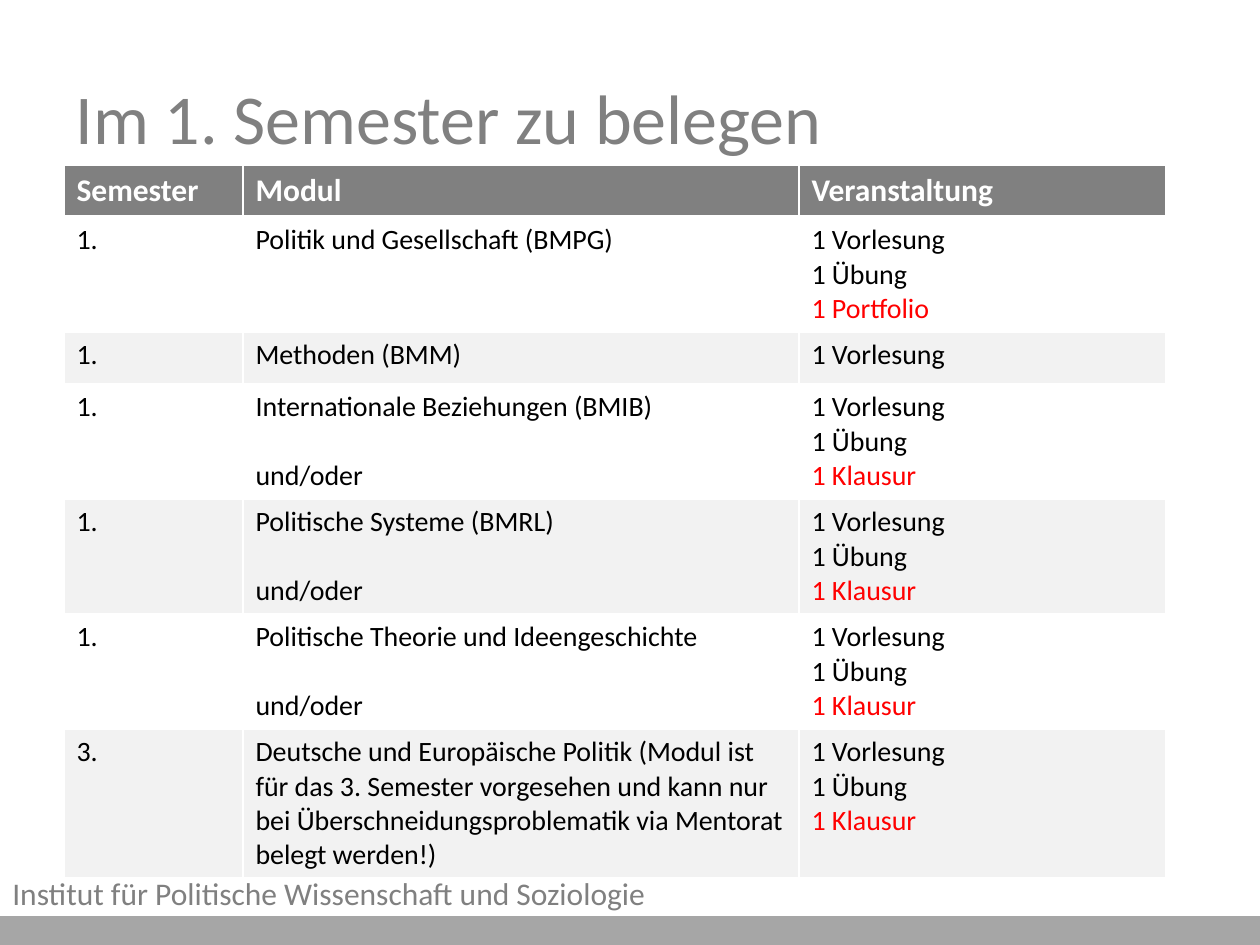
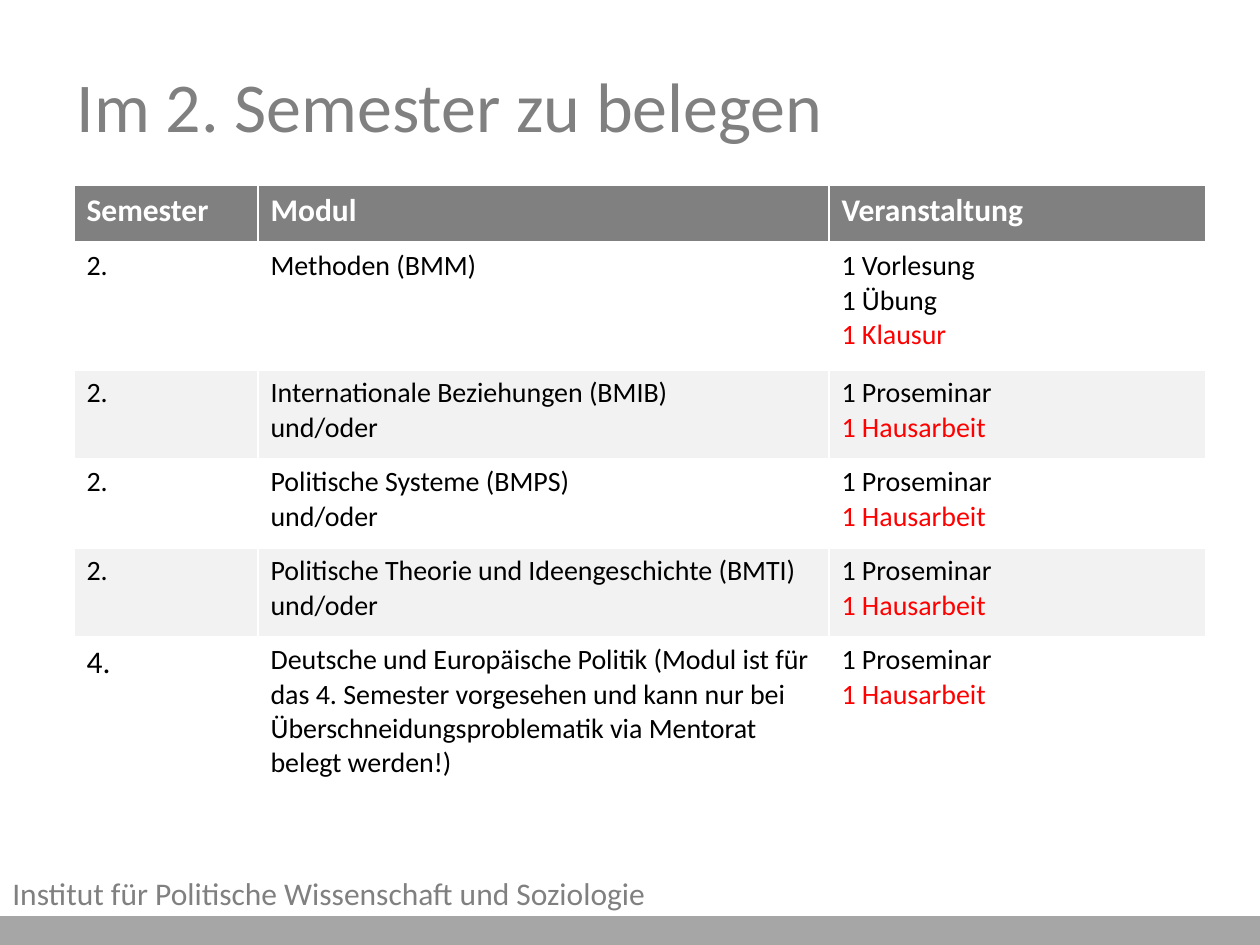
from lxml.etree import SubElement
from pptx import Presentation
from pptx.dml.color import RGBColor
from pptx.enum.shapes import MSO_SHAPE
from pptx.enum.text import MSO_ANCHOR, PP_ALIGN
from pptx.oxml.ns import qn
from pptx.util import Emu, Pt

# Shared look
PX_PER_INCH = 126
FONT = "Calibri"
GREY = RGBColor(0x80, 0x80, 0x80)
BAND_GREY = RGBColor(0xA6, 0xA6, 0xA6)
PALE = RGBColor(0xF2, 0xF2, 0xF2)
WHITE = RGBColor(0xFF, 0xFF, 0xFF)
BLACK = RGBColor(0, 0, 0)
RED = RGBColor(0xFF, 0, 0)

TITLE_FONT = {"name": FONT, "size": Pt(40), "bold": False}
FOOTER_FONT = {"name": FONT, "size": Pt(18)}
HEADER_FONT = {"name": FONT, "size": Pt(18), "bold": True}
BODY_FONT = {"name": FONT, "size": Pt(16), "bold": False}
LARGE_BODY_FONT = BODY_FONT | {"size": Pt(18)}

# Content
INSTITUTE = "Institut für Politische Wissenschaft und Soziologie"
HEADINGS = ("Semester", "Modul", "Veranstaltung")
OR_ELSE = "und/oder"
LECTURE, EXERCISE, SEMINAR = "1 Vorlesung", "1 Übung", "1 Proseminar"
PORTFOLIO, WRITTEN_EXAM, TERM_PAPER = "1 Portfolio", "1 Klausur", "1 Hausarbeit"
ASSESSMENTS = {PORTFOLIO, WRITTEN_EXAM, TERM_PAPER}
FULL_COURSE = (LECTURE, EXERCISE, WRITTEN_EXAM)
SEMINAR_COURSE = (SEMINAR, TERM_PAPER)
GERMAN_POLITICS = (
    "Deutsche und Europäische Politik (Modul ist für das {} Semester vorgesehen "
    "und kann nur bei Überschneidungsproblematik via Mentorat belegt werden!)"
)

# Each module row: semester, module lines, courses
SEMESTERS = [
    {
        "title": "Im 1. Semester zu belegen",
        "title_at": (63, 38),
        "table_at": (64, 165),
        "columns": (179, 556, 367),
        "rows": (52, 115, 52, 115, 115, 115, 149),
        "or_gap": Pt(19.5),
        "semester_fonts": {},
        "modules": [
            ("1.", ("Politik und Gesellschaft (BMPG)",), (LECTURE, EXERCISE, PORTFOLIO)),
            ("1.", ("Methoden (BMM)",), (LECTURE,)),
            ("1.", ("Internationale Beziehungen (BMIB)", OR_ELSE), FULL_COURSE),
            ("1.", ("Politische Systeme (BMRL)", OR_ELSE), FULL_COURSE),
            ("1.", ("Politische Theorie und Ideengeschichte", OR_ELSE), FULL_COURSE),
            ("3.", (GERMAN_POLITICS.format("3."),), FULL_COURSE),
        ],
    },
    {
        "title": "Im 2. Semester zu belegen",
        "title_at": (64, 26),
        "table_at": (74, 185),
        "columns": (184, 571, 377),
        "rows": (58, 127, 89, 89, 89, 171),
        "or_gap": Pt(0),
        "semester_fonts": {"4.": LARGE_BODY_FONT},
        "modules": [
            ("2.", ("Methoden (BMM)",), FULL_COURSE),
            ("2.", ("Internationale Beziehungen (BMIB)", OR_ELSE), SEMINAR_COURSE),
            ("2.", ("Politische Systeme (BMPS)", OR_ELSE), SEMINAR_COURSE),
            ("2.", ("Politische Theorie und Ideengeschichte (BMTI)", OR_ELSE), SEMINAR_COURSE),
            ("4.", (GERMAN_POLITICS.format("4."),), SEMINAR_COURSE),
        ],
    },
]


def px(length):
    return Emu(round(length * 914400 / PX_PER_INCH))


def box(left, top, width, height):
    return [px(length) for length in (left, top, width, height)]


def set_font(paragraph, values, color):
    # Format the runs, so that the settings win over inherited styles
    for run in paragraph.runs:
        for key, value in values.items():
            setattr(run.font, key, value)
        run.font.color.rgb = color


def add_title(slide, text, position):
    title = slide.shapes.title
    title.left, title.top, title.width, title.height = box(*position, 1134, 158)
    title.text = text
    title.text_frame.vertical_anchor = MSO_ANCHOR.MIDDLE
    line = title.text_frame.paragraphs[0]
    line.alignment = PP_ALIGN.LEFT
    set_font(line, TITLE_FONT, GREY)


def add_footer(slide):
    band = slide.shapes.add_shape(MSO_SHAPE.RECTANGLE, *box(0, 918, 1260, 27))
    band.shadow.inherit = False
    band.fill.solid()
    band.fill.fore_color.rgb = BAND_GREY
    band.line.color.rgb = BAND_GREY
    band.line.width = Pt(2)
    institute = slide.shapes.add_textbox(*box(0, 868, 893, 50)).text_frame
    institute.word_wrap = True
    institute.text = INSTITUTE
    set_font(institute.paragraphs[0], FOOTER_FONT, GREY)


def style_cell(cell, fill, top, bottom):
    # White borders come before the fill in the cell properties
    properties = cell._tc.get_or_add_tcPr()
    for side, points in (("L", 1), ("R", 1), ("T", top), ("B", bottom)):
        border = SubElement(properties, qn(f"a:ln{side}"), w=str(Pt(points)))
        SubElement(SubElement(border, qn("a:solidFill")), qn("a:srgbClr"), val=str(WHITE))
    cell.fill.solid()
    cell.fill.fore_color.rgb = fill


def write_lines(cell, lines, font, color, or_gap=Pt(0)):
    cell.text = "\n".join(lines)
    for paragraph, line in zip(cell.text_frame.paragraphs, lines):
        if line == OR_ELSE:
            paragraph.space_before = or_gap
        set_font(paragraph, font, RED if line in ASSESSMENTS else color)


def add_modules(slide, semester):
    columns, rows = semester["columns"], semester["rows"]
    frame = slide.shapes.add_table(
        len(rows), len(columns), *box(*semester["table_at"], sum(columns), sum(rows)))
    table = frame.table
    for column, width in zip(table.columns, columns):
        column.width = px(width)
    for row, height in zip(table.rows, rows):
        row.height = px(height)

    # Heading row
    for column, heading in enumerate(HEADINGS):
        cell = table.cell(0, column)
        style_cell(cell, GREY, 1, 3)
        write_lines(cell, [heading], HEADER_FONT, WHITE)

    # Module rows, alternately white and pale
    for row, (number, module, courses) in enumerate(semester["modules"], 1):
        number_font = semester["semester_fonts"].get(number, BODY_FONT)
        parts = (([number], number_font), (module, BODY_FONT), (courses, BODY_FONT))
        for column, (lines, font) in enumerate(parts):
            cell = table.cell(row, column)
            style_cell(cell, WHITE if row % 2 else PALE, 3 if row == 1 else 1, 1)
            write_lines(cell, lines, font, BLACK, semester["or_gap"])


def main():
    deck = Presentation()
    deck.slide_width, deck.slide_height = px(1260), px(945)
    title_only = deck.slide_layouts[5]
    for semester in SEMESTERS:
        slide = deck.slides.add_slide(title_only)
        add_footer(slide)
        add_title(slide, semester["title"], semester["title_at"])
        add_modules(slide, semester)
    deck.save("out.pptx")


if __name__ == "__main__":
    main()
